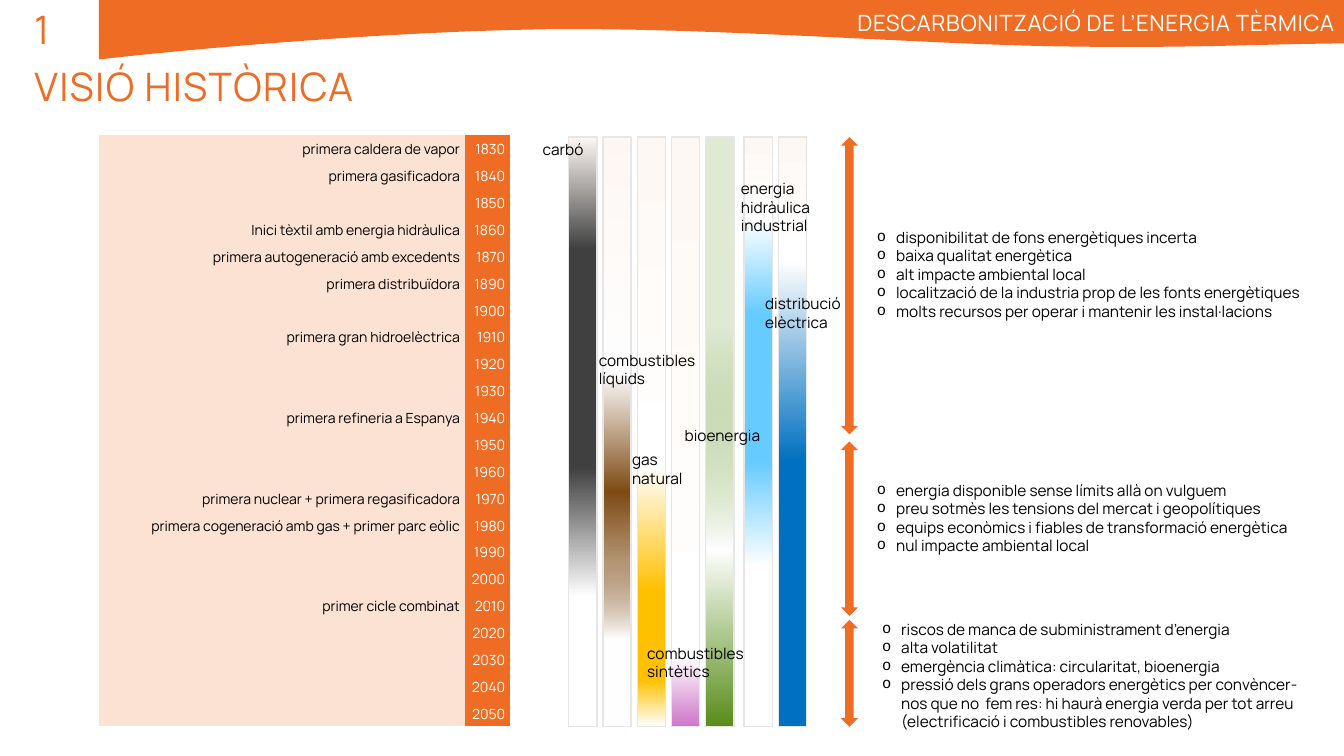
from lxml import etree
from pptx import Presentation
from pptx.dml.color import RGBColor
from pptx.enum.shapes import MSO_SHAPE
from pptx.enum.text import MSO_ANCHOR, MSO_AUTO_SIZE, PP_ALIGN
from pptx.oxml.ns import qn
from pptx.util import Inches, Pt

LEFT, CENTER, RIGHT = PP_ALIGN.LEFT, PP_ALIGN.CENTER, PP_ALIGN.RIGHT
TOP, FIXED_SIZE = MSO_ANCHOR.TOP, MSO_AUTO_SIZE.NONE
RECTANGLE, DOUBLE_ARROW = MSO_SHAPE.RECTANGLE, MSO_SHAPE.UP_DOWN_ARROW
FONT = "Manrope"
NO_TABLE_STYLE = "{2D5ABB26-0587-4C30-8999-92F81FD0307C}"
COLORS = {
    "orange": "EE6C23", "peach": "FCE2D3", "cream": "FEF8F4", "white": "FFFFFF",
    "black": "000000", "grey": "E7E6E6", "coal": "404040", "brown": "7E4B14",
    "yellow": "FFC000", "pink": "CE76C8", "green": "588C18", "sky": "66CCFF",
    "blue": "0070C0",
}


def add_run(paragraph, text, size, color, spacing=0):
    run = paragraph.add_run()
    run.text = text
    run.font.name = FONT
    run.font.size = Pt(size)
    run.font.color.rgb = RGBColor.from_string(COLORS[color])
    if spacing:
        run.font._element.set("spc", str(int(spacing * 100)))


def fill_text(shape, box, lines, size, color, align=LEFT, spacing=0, bullets=False):
    shape.left, shape.top, shape.width, shape.height = [Inches(value) for value in box]
    frame = shape.text_frame
    frame.word_wrap = True
    frame.auto_size = FIXED_SIZE
    frame.vertical_anchor = TOP
    for index, line in enumerate(lines):
        paragraph = frame.add_paragraph() if index else frame.paragraphs[0]
        paragraph.alignment = align
        add_run(paragraph, line, size, color, spacing)
        if bullets:
            properties = paragraph._p.get_or_add_pPr()
            properties.set("marL", str(Inches(0.19)))
            properties.set("indent", str(-Inches(0.19)))
            etree.SubElement(properties, qn("a:buFont")).set("typeface", "Courier New")
            etree.SubElement(properties, qn("a:buChar")).set("char", "o")


presentation = Presentation()
presentation.slide_width = Inches(13.33)
presentation.slide_height = Inches(7.5)
slide = presentation.slides.add_slide(presentation.slide_layouts[5])
shapes = slide.shapes

band_curves = [
    [(0.98, 0.59), (1.84, 0.49), (3.85, 0.31), (5.43, 0.29)],
    [(5.43, 0.29), (7.02, 0.27), (9.18, 0.44), (10.49, 0.46)],
    [(10.49, 0.46), (11.81, 0.48), (12.38, 0.44), (13.33, 0.43)],
]
band_points = [(0.98, 0.59)]
for curve in band_curves:
    for step in range(1, 13):
        t = step / 12
        weights = [(1 - t) ** 3, 3 * t * (1 - t) ** 2, 3 * t ** 2 * (1 - t), t ** 3]
        band_points.append(tuple(
            sum(weight * point[axis] for weight, point in zip(weights, curve))
            for axis in (0, 1)))
band_points.append((13.33, 0))
builder = shapes.build_freeform(Inches(0.98), 0)
builder.add_line_segments([(Inches(x), Inches(y)) for x, y in band_points], close=True)
band = builder.convert_to_shape()
band.shadow.inherit = False
band.fill.solid()
band.fill.fore_color.rgb = RGBColor.from_string(COLORS["orange"])
band.line.fill.background()

fill_text(shapes.title, (0.24, 0.57, 11.4, 0.57), ["VISIÓ HISTÒRICA"], 28, "orange", spacing=1)
fill_text(shapes.add_textbox(0, 0, 0, 0), (0.24, 0, 0.58, 0.57), ["1"], 28, "orange", spacing=1)
fill_text(shapes.add_textbox(0, 0, 0, 0), (6.66, 0.04, 6.68, 0.37),
          ["DESCARBONITZACIÓ DE L’ENERGIA TÈRMICA"], 16, "white", RIGHT, 0.5)

years = [year for year in range(1830, 2051, 10) if year != 1880]
milestones = {
    1830: "primera caldera de vapor",
    1840: "primera gasificadora",
    1860: "Inici tèxtil amb energia hidràulica",
    1870: "primera autogeneració amb excedents",
    1890: "primera distribuïdora",
    1910: "primera gran hidroelèctrica",
    1940: "primera refineria a Espanya",
    1970: "primera nuclear + primera regasificadora",
    1980: "primera cogeneració amb gas + primer parc eòlic",
    2010: "primer cicle combinat",
}
table = shapes.add_table(len(years), 2, Inches(0.98), Inches(1.34),
                         Inches(4.08), Inches(5.87)).table
table.first_row = False
table.horz_banding = False
table._tbl.tblPr.find(qn("a:tableStyleId")).text = NO_TABLE_STYLE
table.columns[0].width = Inches(3.63)
table.columns[1].width = Inches(0.45)
for row, year in enumerate(years):
    table.rows[row].height = Inches(5.87 / len(years))
    cells = [(milestones.get(year), "black", "peach"), (str(year), "white", "orange")]
    for column, (text, color, background) in enumerate(cells):
        cell = table.cell(row, column)
        cell.margin_left = cell.margin_right = Inches(0.05)
        cell.margin_top = Inches(0.05)
        cell.margin_bottom = Inches(0.02)
        cell.fill.solid()
        cell.fill.fore_color.rgb = RGBColor.from_string(COLORS[background])
        paragraph = cell.text_frame.paragraphs[0]
        paragraph.alignment = RIGHT
        if text:
            add_run(paragraph, text, 10, color)
        else:
            paragraph._p.get_or_add_endParaRPr().set("sz", "1000")

energy_gradients = [
    [(0, "cream", 100), (19, "coal", 100), (56, "coal", 100), (78, "white", 100)],
    [(0, "cream", 100), (40, "white", 100), (60, "brown", 100), (72, "brown", 58),
     (85, "white", 100)],
    [(0, "cream", 100), (56, "white", 100), (77, "yellow", 100), (92, "yellow", 100),
     (100, "white", 100)],
    [(0, "cream", 100), (88, "white", 100), (100, "pink", 100)],
    [(0, "green", 18), (32, "green", 18), (70, "white", 100), (100, "green", 100)],
    [(0, "cream", 100), (14, "white", 100), (30, "sky", 100), (55, "sky", 100),
     (73, "white", 100)],
    [(0, "cream", 100), (21, "white", 100), (55, "blue", 100), (100, "blue", 100)],
]
for index, stops in enumerate(energy_gradients):
    group_gap = 0.04 if index > 4 else 0
    bar = shapes.add_shape(RECTANGLE, Inches(5.64 + 0.34 * index + group_gap),
                           Inches(1.36), Inches(0.28), Inches(5.85))
    bar.shadow.inherit = False
    bar.line.color.rgb = RGBColor.from_string(COLORS["grey"])
    bar.line.width = Pt(1)
    bar.fill.gradient()
    bar.fill.gradient_angle = 270
    stop_list = bar._element.spPr.find(".//" + qn("a:gsLst"))
    for old_stop in list(stop_list):
        stop_list.remove(old_stop)
    for position, color, opacity in stops:
        stop = etree.SubElement(stop_list, qn("a:gs"))
        stop.set("pos", str(position * 1000))
        stop_color = etree.SubElement(stop, qn("a:srgbClr"))
        stop_color.set("val", COLORS[color])
        if opacity < 100:
            etree.SubElement(stop_color, qn("a:alpha")).set("val", str(opacity * 1000))

energy_labels = [
    ((5.17, 1.34, 0.83, 0.29), ["carbó"], CENTER),
    ((5.84, 3.43, 1.35, 0.47), ["combustibles líquids"], LEFT),
    ((6.17, 4.42, 1.35, 0.47), ["gas", "natural"], LEFT),
    ((6.32, 6.34, 1.35, 0.47), ["combustibles sintètics"], LEFT),
    ((7.25, 1.73, 1.35, 0.65), ["energia hidràulica industrial"], LEFT),
    ((7.49, 2.87, 1.35, 0.47), ["distribució elèctrica"], LEFT),
    ((6.49, 4.18, 1.35, 0.29), ["bioenergia"], CENTER),
]
for box, lines, align in energy_labels:
    fill_text(shapes.add_textbox(0, 0, 0, 0), box, lines, 11, "black", align)

periods = [
    (1.36, 2.95, (8.6, 2.21, 4.54, 1.21), [
        "disponibilitat de fons energètiques incerta",
        "baixa qualitat energètica",
        "alt impacte ambiental local",
        "localització de la industria prop de les fonts energètiques",
        "molts recursos per operar i mantenir les instal·lacions"]),
    (4.38, 1.73, (8.6, 4.72, 4.54, 1.03), [
        "energia disponible sense límits allà on vulguem",
        "preu sotmès les tensions del mercat i geopolítiques",
        "equips econòmics i fiables de transformació energètica",
        "nul impacte ambiental local"]),
    (6.15, 1.06, (8.65, 6.1, 4.54, 1.4), [
        "riscos de manca de subministrament d’energia",
        "alta volatilitat",
        "emergència climàtica: circularitat, bioenergia",
        "pressió dels grans operadors energètics per convèncer-nos que no  fem res: "
        "hi haurà energia verda per tot arreu (electrificació i combustibles renovables)"]),
]
for top, height, box, lines in periods:
    arrow = shapes.add_shape(DOUBLE_ARROW, Inches(8.34), Inches(top), Inches(0.17), Inches(height))
    arrow.shadow.inherit = False
    arrow.fill.solid()
    arrow.fill.fore_color.rgb = RGBColor.from_string(COLORS["orange"])
    arrow.line.fill.background()
    fill_text(shapes.add_textbox(0, 0, 0, 0), box, lines, 11, "black", bullets=True)

presentation.save("out.pptx")
